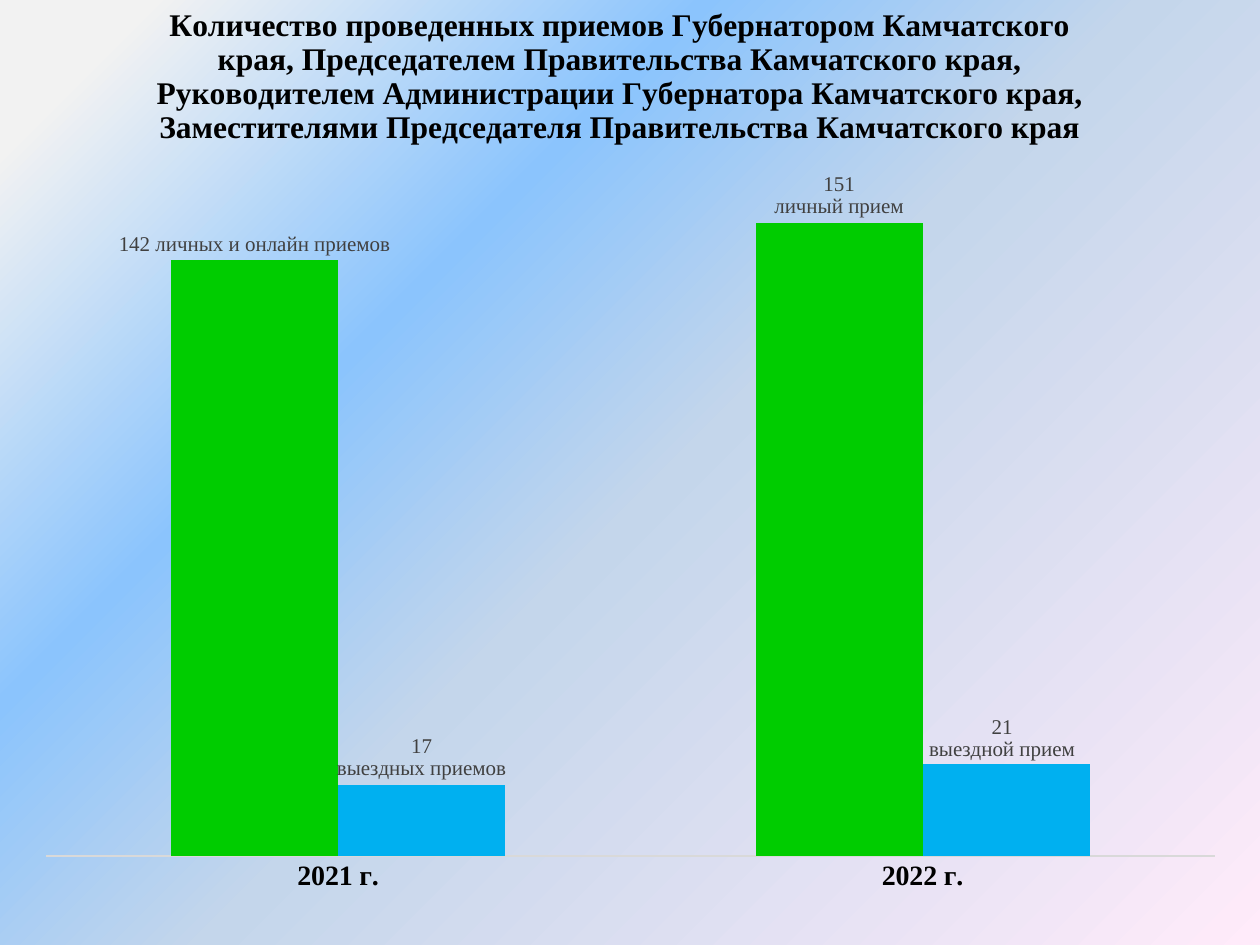
from lxml.etree import SubElement as Sub
from pptx import Presentation
from pptx.chart.data import CategoryChartData
from pptx.dml.color import RGBColor
from pptx.enum.chart import XL_CHART_TYPE as Kind
from pptx.enum.chart import XL_LABEL_POSITION as Spot
from pptx.enum.chart import XL_TICK_LABEL_POSITION as Label
from pptx.enum.chart import XL_TICK_MARK as Tick
from pptx.oxml import parse_xml
from pptx.oxml.ns import nsdecls, qn
from pptx.util import Emu, Pt

SCALE = 914400 / 126
WIDE, HIGH = 1221, 908  # chart size in px
SERIF = "Times New Roman"
COLORS = {
    "text": "000000", "label": "404040", "axis": "D9D9D9",
    "office": "00CC00", "visit": "00B0F0",
}
STOPS = [(7, "F2F2F2"), (32, "8BC4FD"), (52, "C4D6EB"), (100, "FFEBFA")]
TITLE = (
    "Количество проведенных приемов Губернатором Камчатского края, "
    "Председателем Правительства Камчатского края, "
    "Руководителем Администрации Губернатора Камчатского края, "
    "Заместителями Председателя Правительства Камчатского края"
)
YEARS = ["2021 г.", "2022 г."]
SERIES = [
    ("Series 1", [142, 151], "office",
     ["142 личных и онлайн приемов", "151\nличный прием"]),
    ("Series 2", [17, 22], "visit",
     ["17\nвыездных приемов", "21\nвыездной прием"]),
]


def px(n):
    return Emu(round(n * SCALE))


def rgb(name):
    return RGBColor.from_string(COLORS[name])


def style(font, size, color="text", bold=False, face=SERIF):
    font.name, font.size, font.bold = face, Pt(size), bold
    font.color.rgb = rgb(color)


def paint_back(slide):
    """Fill the background with a diagonal gradient of several stops."""
    fill = slide.background.fill
    fill.gradient()
    grad = slide.background._cSld.bg.bgPr.find(qn("a:gradFill"))
    for part in list(grad):
        grad.remove(part)
    stops = Sub(grad, qn("a:gsLst"))
    for pos, color in STOPS:
        stop = Sub(stops, qn("a:gs"), pos=str(pos * 1000))
        Sub(stop, qn("a:srgbClr"), val=color)
    Sub(grad, qn("a:lin"), ang=str(45 * 60000), scaled="0")


def layout(x, y, size=None, edge=True):
    """Make a manual layout from px; without edge, x and y are a shift."""
    vals = {"x": x / WIDE, "y": y / HIGH}
    if size:
        vals.update(w=size[0] / WIDE, h=size[1] / HIGH)
    target = '<c:layoutTarget val="inner"/>' if size else ""
    modes = '<c:xMode val="edge"/><c:yMode val="edge"/>' if edge else ""
    tags = "".join(f'<c:{k} val="{v:.5f}"/>' for k, v in vals.items())
    return parse_xml(
        f'<c:layout {nsdecls("c")}><c:manualLayout>'
        f"{target}{modes}{tags}</c:manualLayout></c:layout>"
    )


def drop_layout(part):
    for old in part.findall(qn("c:layout")):
        part.remove(old)


def add_title(chart):
    title = chart.chart_title
    frame = title.text_frame
    frame.text = TITLE
    style(frame.paragraphs[0].runs[0].font, 18, bold=True)
    title = title._element
    drop_layout(title)
    title.find(qn("c:tx")).addnext(layout(136, -4))


def set_axes(chart):
    years, counts = chart.category_axis, chart.value_axis
    years.major_tick_mark = years.minor_tick_mark = Tick.NONE
    years.tick_label_position = Label.NEXT_TO_AXIS
    years.format.line.color.rgb = rgb("axis")
    years.format.line.width = Pt(1)
    style(years.tick_labels.font, 16, bold=True)
    counts.minimum_scale, counts.maximum_scale = 0, 160
    counts.major_unit = 10
    counts.has_major_gridlines = False
    counts.visible = False


def add_labels(series, texts):
    labels = series.data_labels
    labels.show_value = True
    labels.position = Spot.OUTSIDE_END
    style(labels.font, 12, "label", True)
    for i, text in enumerate(texts):
        label = series.points[i].data_label
        frame = label.text_frame
        frame.text = text
        frame.word_wrap = False
        for para in frame.paragraphs:
            for run in para.runs:
                style(run.font, 12, "label")
        label.position = Spot.OUTSIDE_END


def shift_label(series, i, x, y):
    item = series.data_labels._element.findall(qn("c:dLbl"))[i]
    drop_layout(item)
    item.find(qn("c:idx")).addnext(layout(x, y, edge=False))


def add_bars(slide):
    data = CategoryChartData()
    data.categories = YEARS
    for name, vals, _, _ in SERIES:
        data.add_series(name, vals)
    chart = slide.shapes.add_chart(
        Kind.COLUMN_CLUSTERED, px(15), px(-1), px(WIDE), px(HIGH), data
    ).chart
    style(chart.font, 10, face="Calibri")
    chart.has_legend = False
    add_title(chart)
    set_axes(chart)

    plot = chart.plots[0]
    plot.gap_width, plot.overlap = 150, 0
    plot.vary_by_categories = False
    for series, (_, _, color, texts) in zip(plot.series, SERIES):
        series.format.fill.solid()
        series.format.fill.fore_color.rgb = rgb(color)
        series.invert_if_negative = False
        add_labels(series, texts)
    shift_label(plot.series[1], 1, -4, 2)

    area = chart._chartSpace.chart.plotArea
    drop_layout(area)
    area.insert(0, layout(31, 186, (1169, 671)))


def main():
    deck = Presentation()
    deck.slide_width, deck.slide_height = px(1260), px(945)
    slide = deck.slides.add_slide(deck.slide_layouts[6])
    paint_back(slide)
    add_bars(slide)
    deck.save("out.pptx")


if __name__ == "__main__":
    main()
